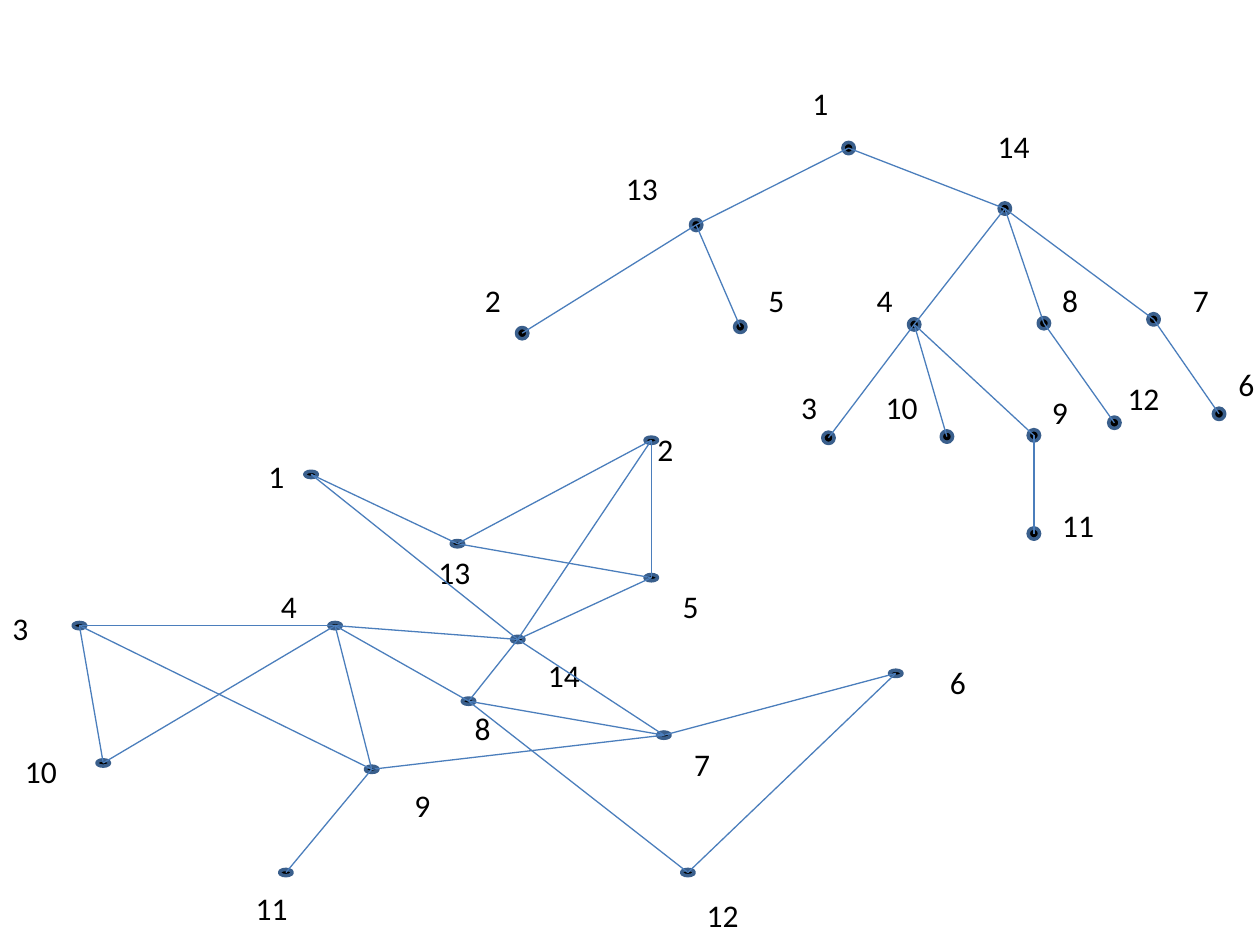
from pptx import Presentation
from pptx.dml.color import RGBColor
from pptx.enum.shapes import MSO_CONNECTOR, MSO_SHAPE
from pptx.enum.text import MSO_AUTO_SIZE
from pptx.oxml.ns import qn
from pptx.util import Pt
from lxml.etree import SubElement

THEME = {
    "font": "Calibri",
    "label_size": 18,
    "text": RGBColor(0x00, 0x00, 0x00),
    "node_fill": RGBColor(0x00, 0x00, 0x00),
    "node_line": RGBColor(0x3A, 0x5F, 0x8C),
    "edge": RGBColor(0x4B, 0x7E, 0xBC),
}

# Each node: number -> (centre x, centre y, label left, label top)
GRAPH = {
    "node_size": (7.2, 3.6),
    "label_height": 20.2,
    "label_widths": {1: 20.9, 2: 45},
    "nodes": {
        1: (177.8, 271.1, 146.2, 257.8),
        2: (372.2, 251.6, 368.6, 241.9),
        3: (45.4, 357.5, 0, 344.2),
        4: (191.5, 357.5, 153.4, 331.9),
        5: (372.2, 330.1, 383, 331.9),
        6: (511.9, 384.8, 535.7, 375.1),
        7: (379.4, 420.1, 389.5, 421.9),
        8: (267.8, 400.7, 264.2, 401.8),
        9: (212.4, 439.6, 229.7, 445.7),
        10: (59, 436, 7.2, 426.2),
        11: (163.4, 498.6, 139, 504.7),
        12: (393.1, 498.6, 396.7, 508.3),
        13: (261.4, 310.7, 243.4, 312.5),
        14: (295.9, 365.4, 306, 371.5),
    },
    "edges": [
        (1, 13), (1, 14), (2, 5), (2, 13), (2, 14), (5, 13), (5, 14),
        (3, 4), (3, 9), (3, 10), (4, 8), (4, 9), (4, 10), (4, 14),
        (6, 7), (6, 12), (7, 8), (7, 9), (7, 14), (8, 12), (8, 14), (9, 11),
    ],
}

SPANNING_TREE = {
    "node_size": (6.5, 6.5),
    "label_height": 35.3,
    "label_widths": {1: 19.4, 2: 40},
    "nodes": {
        1: (484.9, 84.6, 457.2, 44.6),
        2: (298.4, 190.4, 270, 157),
        3: (473.4, 250.2, 450.7, 218.2),
        4: (522.4, 185.4, 493.9, 157),
        5: (423, 186.8, 432, 157),
        6: (696.6, 236.5, 700.6, 205.2),
        7: (659.2, 182.5, 674.6, 157),
        8: (596.5, 184.7, 599.8, 157),
        9: (590.8, 248.8, 594, 221),
        10: (541.1, 249.5, 499, 218.2),
        11: (590.8, 304.9, 599.8, 285.8),
        12: (636.8, 241.6, 637.2, 213.1),
        13: (397.8, 128.5, 350.6, 92.9),
        14: (574.2, 119.2, 563, 69.1),
    },
    "edges": [
        (1, 13), (1, 14), (13, 2), (13, 5), (14, 4), (14, 8), (14, 7),
        (4, 3), (4, 10), (4, 9), (8, 12), (7, 6), (9, 11),
    ],
}


def add_label(shapes, text, left, top, width, height):
    label = shapes.add_textbox(Pt(left), Pt(top), Pt(width), Pt(height))
    label.text_frame.word_wrap = True
    label.text_frame.auto_size = MSO_AUTO_SIZE.SHAPE_TO_FIT_TEXT
    paragraph = label.text_frame.paragraphs[0]
    paragraph.text = text
    paragraph.font.name = THEME["font"]
    paragraph.font.size = Pt(THEME["label_size"])
    paragraph.font.color.rgb = THEME["text"]


def add_node(shapes, x, y, width, height):
    node = shapes.add_shape(MSO_SHAPE.OVAL, Pt(x - width / 2), Pt(y - height / 2),
                            Pt(width), Pt(height))
    node.shadow.inherit = False
    node.fill.solid()
    node.fill.fore_color.rgb = THEME["node_fill"]
    node.line.color.rgb = THEME["node_line"]
    node.line.width = Pt(2)


def add_edge(shapes, start, end):
    edge = shapes.add_connector(MSO_CONNECTOR.STRAIGHT, *map(Pt, start + end))
    edge.line.color.rgb = THEME["edge"]
    edge.line.width = Pt(0.75)
    SubElement(edge._element.spPr, qn("a:effectLst"))


def draw_network(shapes, network):
    """Draw labels, then nodes, then the edges that join node centres."""
    nodes = network["nodes"]
    for number, (_, _, left, top) in nodes.items():
        text = str(number)
        add_label(shapes, text, left, top,
                  network["label_widths"][len(text)], network["label_height"])
    for x, y, _, _ in nodes.values():
        add_node(shapes, x, y, *network["node_size"])
    for start, end in network["edges"]:
        add_edge(shapes, nodes[start][:2], nodes[end][:2])


def main():
    presentation = Presentation()
    presentation.slide_width, presentation.slide_height = Pt(720), Pt(540)
    slide = presentation.slides.add_slide(presentation.slide_layouts[6])
    draw_network(slide.shapes.add_group_shape().shapes, GRAPH)
    draw_network(slide.shapes, SPANNING_TREE)
    presentation.save("out.pptx")


if __name__ == "__main__":
    main()
